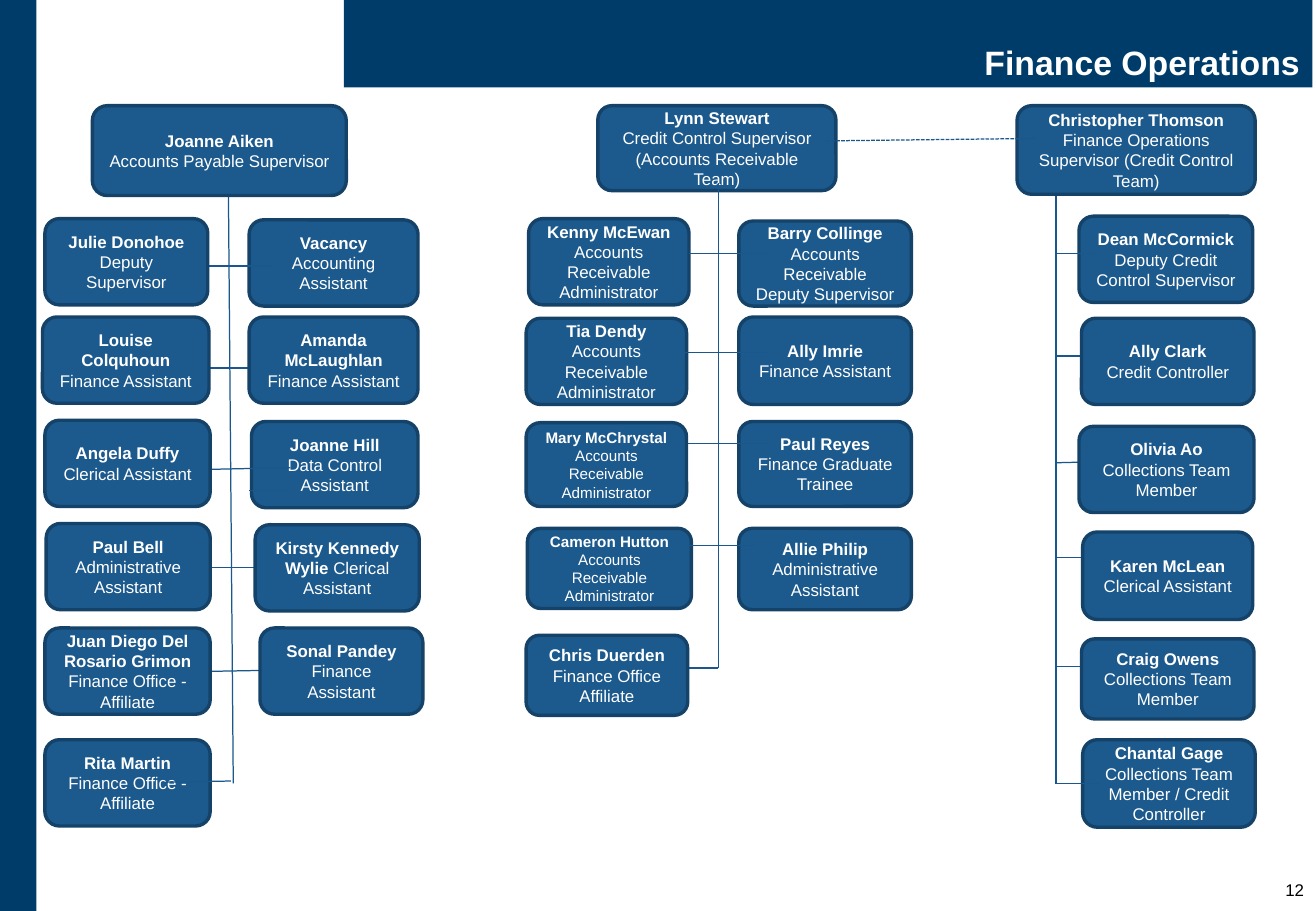
from dataclasses import dataclass
from typing import Iterable

from lxml.etree import SubElement
from pptx import Presentation
from pptx.dml.color import RGBColor
from pptx.enum.dml import MSO_LINE
from pptx.enum.shapes import MSO_CONNECTOR as CONN, MSO_SHAPE as SHAPE
from pptx.enum.text import MSO_ANCHOR as ANCHOR, MSO_AUTO_SIZE as FIT, PP_ALIGN as ALIGN
from pptx.oxml.ns import qn
from pptx.util import Emu, Pt

PX = 9144
FONT = "Arial"
NAVY, BLUE, EDGE, LINK, WHITE, BLACK = "003C69", "1C598C", "154268", "19578C", "FFFFFF", "000000"


@dataclass
class Person:
    x: int
    y: int
    w: int
    h: int
    name: str
    role: str
    size: int = 10
    inline: bool = False


@dataclass
class Link:
    x1: int
    y1: int
    x2: int
    y2: int
    dashed: bool = False


def px(n: int) -> Emu:
    return Emu(n * PX)


def rgb(color: str) -> RGBColor:
    return RGBColor.from_string(color)


def set_font(font, size: int, color: str, bold: bool | None = None) -> None:
    font.name, font.size, font.bold = FONT, Pt(size), bold
    font.color.rgb = rgb(color)


def add_people(people: Iterable[Person]) -> None:
    for m in people:
        sp = slide.shapes.add_shape(SHAPE.ROUNDED_RECTANGLE, px(m.x), px(m.y), px(m.w), px(m.h))
        sp.shadow.inherit = False
        sp.fill.solid()
        sp.fill.fore_color.rgb = rgb(BLUE)
        sp.line.color.rgb = rgb(EDGE)
        sp.line.width = Pt(2)
        tf = sp.text_frame
        tf.word_wrap = True
        tf.vertical_anchor = ANCHOR.MIDDLE
        p = tf.paragraphs[0]
        r = p.add_run()
        r.text = m.name + " " if m.inline else m.name
        r.font.bold = True
        if not m.inline:
            tf.add_paragraph()
        tf.paragraphs[-1].add_run().text = m.role
        for p in tf.paragraphs:
            p.alignment = ALIGN.CENTER
            set_font(p.font, m.size, WHITE)


def add_links(links: Iterable[Link]) -> None:
    for k in links:
        c = slide.shapes.add_connector(CONN.STRAIGHT, px(k.x1), px(k.y1), px(k.x2), px(k.y2))
        c.line.color.rgb = rgb(LINK)
        c.line.width = Pt(0.75)
        if k.dashed:
            c.line.dash_style = MSO_LINE.SQUARE_DOT
        SubElement(c._element.spPr, qn("a:effectLst"))


BACK_LINKS = [
    Link(192, 645, 188, 161),
    Link(154, 303, 214, 303),
    Link(165, 467, 222, 467),
    Link(157, 553, 214, 552),
    Link(550, 550, 591, 550),
    Link(869, 645, 869, 115),
    Link(869, 293, 908, 293),
    Link(869, 381, 908, 380),
    Link(869, 459, 907, 459),
    Link(869, 549, 907, 549),
]
FRONT_LINKS = [
    Link(165, 219, 225, 219),
    Link(146, 387, 239, 385),
    Link(205, 404, 239, 404),
    Link(591, 550, 591, 151),
    Link(567, 209, 631, 209),
    Link(562, 290, 631, 290),
    Link(566, 365, 631, 365),
    Link(567, 449, 622, 449),
    Link(870, 209, 904, 209),
    Link(868, 645, 906, 645),
    Link(680, 116, 852, 114, dashed=True),
]
RITA_LINK = Link(134, 644, 190, 643)

SUPERVISORS = [
    Person(76, 87, 209, 74, "Joanne Aiken", "Accounts Payable Supervisor"),
    Person(492, 87, 196, 70, "Lynn Stewart",
           "Credit Control Supervisor (Accounts Receivable Team)"),
    Person(837, 87, 196, 73, "Christopher Thomson",
           "Finance Operations Supervisor (Credit Control Team)", inline=True),
]
PAYABLE_LEFT = [
    Person(37, 180, 134, 71, "Julie Donohoe", "Deputy Supervisor"),
    Person(35, 261, 137, 71, "Louise Colquhoun", "Finance Assistant"),
    Person(37, 346, 136, 71, "Angela Duffy", "Clerical Assistant"),
    Person(38, 431, 135, 71, "Paul Bell", "Administrative Assistant"),
    Person(37, 517, 136, 71, "Juan Diego Del Rosario Grimon", "Finance Office - Affiliate"),
    Person(37, 609, 136, 71, "Rita Martin", "Finance Office - Affiliate"),
]
PAYABLE_RIGHT = [
    Person(205, 181, 139, 71, "Vacancy", "Accounting Assistant"),
    Person(205, 261, 139, 71, "Amanda McLaughlan", "Finance Assistant"),
    Person(207, 347, 137, 71, "Joanne Hill", "Data Control Assistant"),
    Person(210, 432, 135, 71, "Kirsty Kennedy Wylie", "Clerical Assistant", inline=True),
    Person(214, 517, 134, 71, "Sonal Pandey", "Finance Assistant"),
]
RECEIVABLE_LEFT = [
    Person(435, 180, 132, 71, "Kenny McEwan", "Accounts Receivable Administrator", inline=True),
    Person(433, 262, 132, 71, "Tia Dendy", "Accounts Receivable Administrator"),
    Person(433, 348, 132, 69, "Mary McChrystal", "Accounts Receivable Administrator", 9, True),
    Person(434, 435, 135, 66, "Cameron Hutton", "Accounts Receivable Administrator", 9),
    Person(433, 523, 133, 66, "Chris Duerden", "Finance Office Affiliate"),
]
RECEIVABLE_RIGHT = [
    Person(608, 182, 142, 70, "Barry Collinge", "Accounts Receivable Deputy Supervisor",
           inline=True),
    Person(608, 261, 142, 72, "Ally Imrie", "Finance Assistant"),
    Person(608, 347, 142, 70, "Paul Reyes", "Finance Graduate Trainee"),
    Person(608, 435, 142, 67, "Allie Philip", "Administrative Assistant"),
]
CREDIT_CONTROL = [
    Person(888, 178, 143, 71, "Dean McCormick", "Deputy Credit Control Supervisor"),
    Person(890, 262, 142, 71, "Ally Clark", "Credit Controller"),
    Person(888, 351, 144, 71, "Olivia Ao", "Collections Team Member"),
    Person(891, 438, 140, 72, "Karen McLean", "Clerical Assistant"),
    Person(890, 526, 142, 66, "Craig Owens", "Collections Team Member"),
    Person(891, 609, 142, 72, "Chantal Gage", "Collections Team Member / Credit Controller"),
]

prs = Presentation()
prs.slide_width, prs.slide_height = px(1083), px(750)
slide = prs.slides.add_slide(prs.slide_layouts[5])

bar = slide.shapes.add_shape(SHAPE.RECTANGLE, 0, 0, px(30), px(750))
bar.shadow.inherit = False
bar.fill.solid()
bar.fill.fore_color.rgb = rgb(NAVY)
bar.line.fill.background()

title = slide.shapes.title
title.left, title.top, title.width, title.height = px(283), px(0), px(797), px(72)
title.fill.solid()
title.fill.fore_color.rgb = rgb(NAVY)
tf = title.text_frame
tf.text = "Finance Operations"
tf.word_wrap = True
tf.auto_size = FIT.NONE
tf.vertical_anchor = ANCHOR.BOTTOM
tf.margin_left, tf.margin_top, tf.margin_right, tf.margin_bottom = px(8), px(4), px(10), px(4)
p = tf.paragraphs[0]
p.alignment = ALIGN.RIGHT
p.line_spacing = 0.9
set_font(p.font, 20, WHITE, True)

number = slide.shapes.add_textbox(px(996), px(719), px(87), px(31))
tf = number.text_frame
tf.word_wrap = True
tf.text = "12"
p = tf.paragraphs[0]
p.alignment = ALIGN.RIGHT
set_font(p.font, 10, BLACK)

add_links(BACK_LINKS)
for team in (SUPERVISORS, PAYABLE_RIGHT, RECEIVABLE_LEFT, RECEIVABLE_RIGHT, CREDIT_CONTROL):
    add_people(team)
add_links(FRONT_LINKS)
add_people(PAYABLE_LEFT)
add_links([RITA_LINK])

prs.save("out.pptx")
